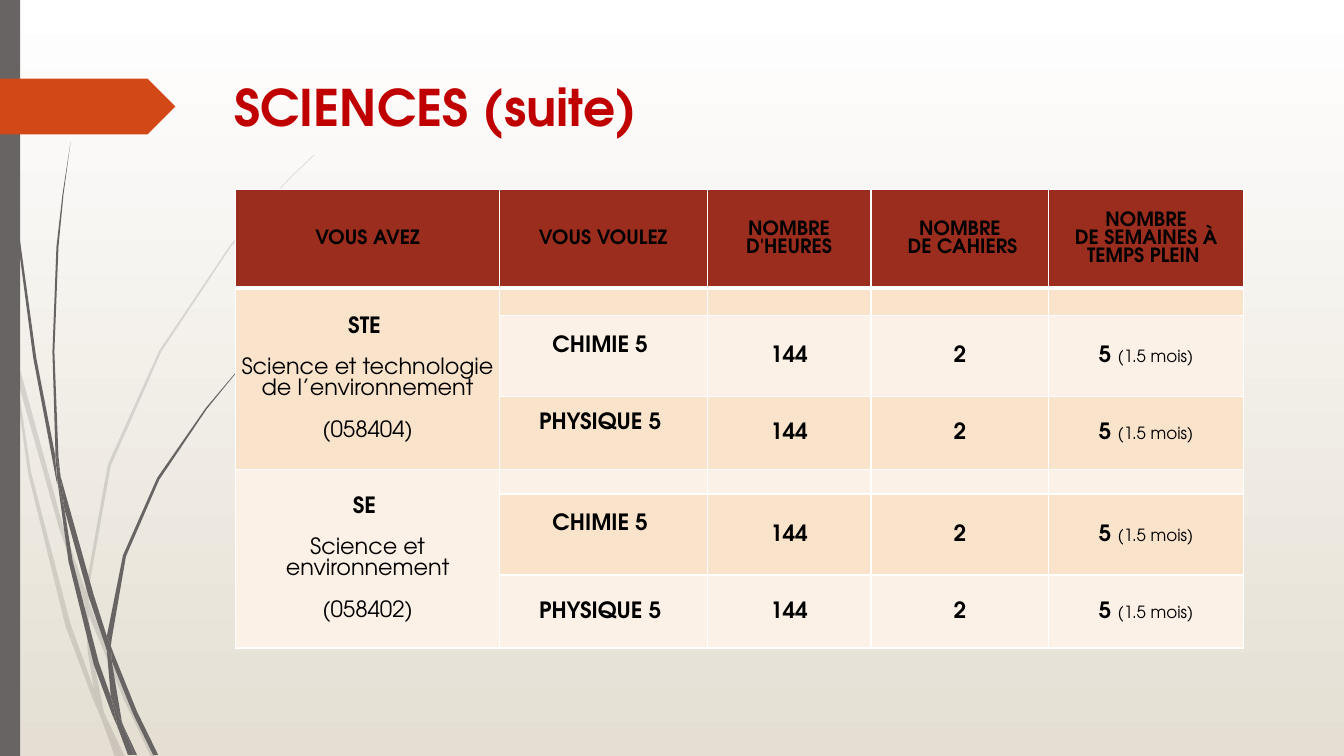
import pptx
import pptx.dml.color
import pptx.enum.shapes
import pptx.enum.text
import pptx.oxml.ns
import pptx.util
from lxml import etree

Cm, Pt = pptx.util.Cm, pptx.util.Pt
qn = pptx.oxml.ns.qn
KIND = pptx.enum.shapes.MSO_SHAPE
ANCHOR = pptx.enum.text.MSO_ANCHOR
ALIGN = pptx.enum.text.PP_ALIGN
FACE = "TeX Gyre Adventor"
GREY, SAND, CREAM, BRICK = "696464", "F9E3CB", "FCF1E7", "9B2D1F"
UNIT = .0254  # cm in one step of the grass outlines

# Pieces of grass: outlines as x, y, x, y ...
PALE = [
    [11, 350, 9, 322, 0, 282, 0, 299, 10, 344],
    [58, 522, 84, 599, 85, 586, 62, 520, 14, 345, 17, 376],
    [92, 607, 88, 596, 88, 610, 123, 694, 150, 751, 155, 751, 127, 692],
    [119, 751, 124, 751, 105, 711],
    [93, 683, 70, 619, 31, 469, 17, 376, 11, 350, 28, 470, 65, 621, 92, 693, 101, 714,
     99, 707],
    [84, 599, 87, 646, 93, 683, 96, 692, 105, 711, 103, 706, 91, 646, 88, 610, 88, 608],
    [88, 584, 110, 462, 160, 349, 229, 245, 268, 198, 290, 175, 312, 154, 312, 153,
     289, 175, 268, 197, 228, 244, 158, 348, 107, 461, 85, 584, 85, 586, 88, 596],
    [101, 714, 114, 751, 119, 751],
    [88, 608, 88, 610, 88, 596, 85, 586, 84, 599],
    [96, 692, 93, 683, 99, 707, 101, 714, 119, 751, 105, 711],
]
DARK = [
    [7, 110, 17, 233, 33, 355, 56, 477, 57, 481, 55, 457, 55, 453, 36, 355, 19, 232,
     8, 109, 5, 48, 4, 0, 3, 0, 4, 48],
    [88, 592, 106, 645, 106, 633, 106, 631, 93, 590, 60, 472, 64, 505],
    [113, 649, 110, 641, 111, 656, 132, 708, 152, 749, 157, 749, 136, 706],
    [110, 691, 98, 657, 72, 556, 64, 505, 57, 477, 68, 557, 93, 659, 111, 708, 117, 722,
     116, 717],
    [60, 472, 58, 453, 54, 349, 58, 245, 63, 193, 70, 141, 62, 193, 56, 245, 52, 349,
     55, 449],
    [133, 749, 136, 749, 122, 719],
    [57, 477, 64, 505, 60, 472, 55, 449, 55, 453],
    [111, 633, 125, 552, 158, 476, 205, 406, 231, 374, 245, 359, 261, 344, 260, 344,
     245, 358, 231, 373, 204, 405, 156, 474, 122, 551, 106, 631, 110, 641],
    [117, 722, 127, 749, 131, 749],
    [106, 645, 110, 691, 116, 706, 122, 719, 121, 716, 111, 656, 109, 651],
    [106, 645, 109, 651, 111, 656, 110, 641, 106, 631, 106, 633],
    [116, 706, 110, 691, 116, 717, 117, 722, 130, 749, 133, 749, 122, 719],
]

# Table content
COLS = [6.65, 5.23, 4.13, 4.48, 4.91]
ROWS = [2.48, .7, 2.04, 1.84, .62, 2.04, 1.84]
HEADS = [["VOUS AVEZ"], ["VOUS VOULEZ"], ["NOMBRE", "D'HEURES"],
         ["NOMBRE", " DE CAHIERS"], [" NOMBRE ", "DE SEMAINES À TEMPS PLEIN "]]
HAVE = [["STE ", "Science et technologie de l’environnement", "(058404)"],
        ["SE ", "Science et environnement", "(058402)"]]
WANT = ["CHIMIE 5 ", "PHYSIQUE 5 "]


def tint(code):
    return pptx.dml.color.RGBColor.from_string(code)


def apply(item, form):
    for name, value in form.items():
        setattr(item, name, value)


def paint(shape, code, alpha=None):
    shape.shadow.inherit = False
    shape.fill.solid()
    shape.fill.fore_color.rgb = tint(code)
    shape.line.fill.background()
    if alpha:
        clr = shape._element.spPr.find(".//" + qn("a:srgbClr"))
        etree.SubElement(clr, qn("a:alpha"), val=str(alpha * 1000))


def write(para, text, size, code="000000", bold=True):
    run = para.add_run()
    run.text = text
    apply(run.font, {"name": FACE, "size": Pt(size), "bold": bold})
    run.font.color.rgb = tint(code)


def blade(slide, rim, alpha):
    spots = [(Cm(x * UNIT), Cm(y * UNIT)) for x, y in zip(rim[::2], rim[1::2])]
    form = slide.shapes.build_freeform(*spots[0])
    form.add_line_segments(spots[1:], close=True)
    paint(form.convert_to_shape(), GREY, alpha)


def block(slide, kind, box, code):
    paint(slide.shapes.add_shape(kind, *map(Cm, box)), code)


def title(slide, text):
    frame = slide.shapes.add_textbox(*map(Cm, (5.65, 1.8, 23.98, 2.36))).text_frame
    frame.word_wrap = True
    write(frame.paragraphs[0], text, 36, "C00000")


def border(cell, tag, width):
    line = etree.SubElement(cell._tc.get_or_add_tcPr(), qn("a:" + tag), w=str(Pt(width)))
    solid = etree.SubElement(line, qn("a:solidFill"))
    etree.SubElement(solid, qn("a:srgbClr"), val="FFFFFF")


def dress(cell, row, code):
    thick = {"lnT": 3 if row == 1 else 1, "lnB": 3 if row == 0 else 1}
    for tag in ("lnL", "lnR", "lnT", "lnB"):
        border(cell, tag, thick.get(tag, 1))
    cell.fill.solid()
    cell.fill.fore_color.rgb = tint(code)
    apply(cell, {"margin_left": Cm(.03), "margin_right": Cm(.03), "margin_top": Cm(.03),
                 "margin_bottom": 0, "vertical_anchor": ANCHOR.MIDDLE})
    # Keep the narrow empty rows from growing
    etree.SubElement(cell.text_frame.paragraphs[0]._p, qn("a:endParaRPr"), sz="800")


def fill(cell, lines, size=16, lead=15, gap=0):
    """Each line is a list of (text, format) runs."""
    frame = cell.text_frame
    for i, runs in enumerate(lines):
        para = frame.add_paragraph() if i else frame.paragraphs[0]
        apply(para, {"alignment": ALIGN.CENTER, "line_spacing": Pt(lead),
                     "space_before": Pt(gap if i else 0)})
        for text, form in runs:
            write(para, text, **{"size": size, **form})


def grid(slide):
    box = map(Cm, (5.94, 4.77, sum(COLS), sum(ROWS)))
    table = slide.shapes.add_table(len(ROWS), len(COLS), *box).table
    for col, wide in zip(table.columns, COLS):
        col.width = Cm(wide)
    for row, tall in zip(table.rows, ROWS):
        row.height = Cm(tall)
    for r in range(len(ROWS)):
        for c in range(len(COLS)):
            sandy = r % 2 if c else r < 4
            dress(table.cell(r, c), r, BRICK if r == 0 else SAND if sandy else CREAM)

    # Header row
    for c, lines in enumerate(HEADS):
        fill(table.cell(0, c), [[(text, {})] for text in lines], 14, 13)

    # One group of three rows for each course
    weeks = [("5 ", {}), ("(1.5 mois)", {"size": 12, "bold": False})]
    for top, lines in zip((1, 4), HAVE):
        table.cell(top, 0).merge(table.cell(top + 2, 0))
        fill(table.cell(top, 0),
             [[(text, {"bold": i == 0})] for i, text in enumerate(lines)], gap=14.8)
        for r, want in enumerate(WANT, top + 1):
            for c, runs in enumerate(([(want, {})], [("144", {})], [("2", {})], weeks), 1):
                fill(table.cell(r, c), [runs])
            if r < len(ROWS) - 1:
                table.cell(r, 1).margin_bottom = Cm(.54)


def main():
    deck = pptx.Presentation()
    apply(deck, {"slide_width": Cm(33.87), "slide_height": Cm(19.05)})
    slide = deck.slides.add_slide(deck.slide_layouts[6])

    # Background
    back = slide.background.fill
    back.gradient()
    back.gradient_angle = 270
    for stop, code in zip(back.gradient_stops, ("FFFFFF", "E5DFD3")):
        stop.color.rgb = tint(code)

    # Grass, side bar and tag
    for rims, alpha in ((PALE, 20), (DARK, None)):
        for rim in rims:
            blade(slide, rim, alpha)
    block(slide, KIND.RECTANGLE, (0, 0, .51, 19.05), GREY)
    block(slide, KIND.PENTAGON, (0, 1.98, 4.42, 1.41), "D34817")

    # Title and table
    title(slide, "SCIENCES (suite)")
    grid(slide)
    deck.save("out.pptx")


if __name__ == "__main__":
    main()
